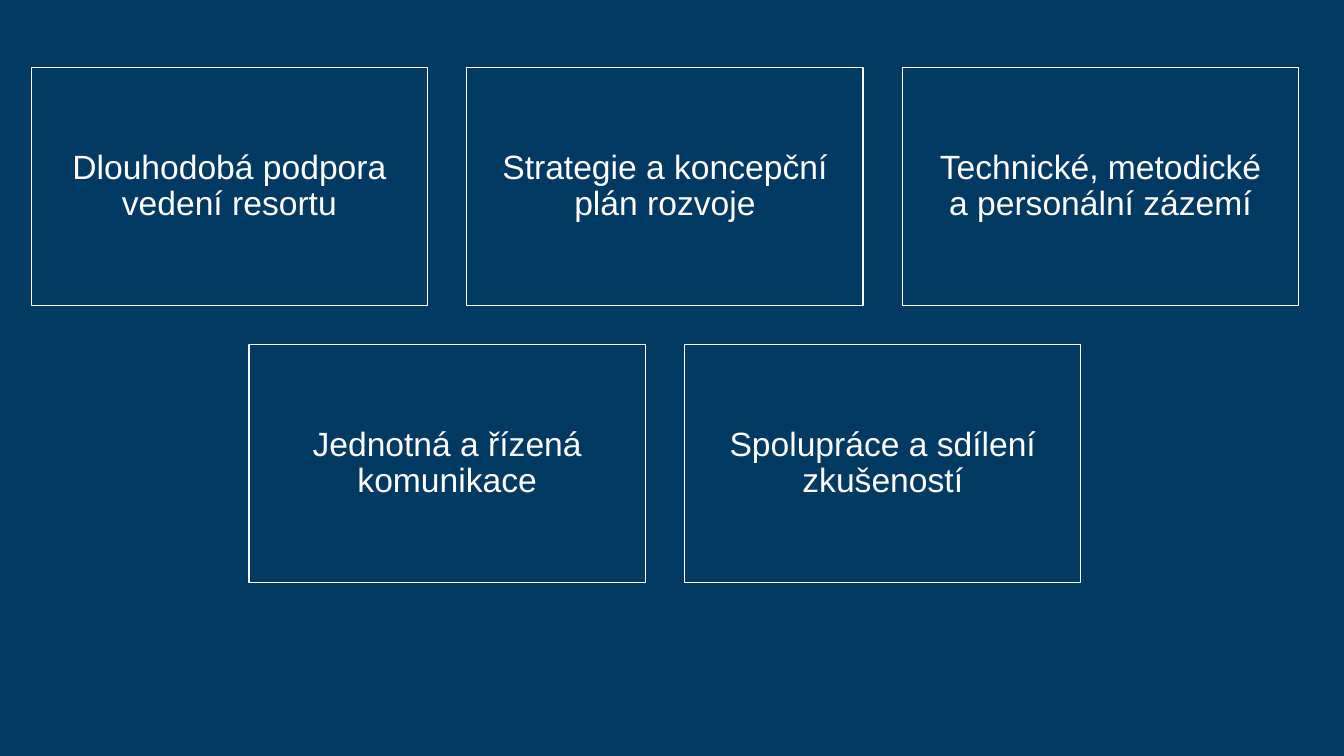
import dataclasses

import pptx
import pptx.dml.color
import pptx.enum.shapes
import pptx.enum.text
import pptx.util
from pptx.util import Inches

COLORS = {"background": "003A62", "card": "003A63", "white": "FFFFFF"}

# Card grid, in inches
LEFT, TOP = 0.31, 0.67
WIDTH, HEIGHT = 3.93, 2.36
PITCH_X, PITCH_Y = 4.32, 2.75
COLUMNS = 3

# Keeps a one-letter conjunction on the line of the next word
NO_BREAK_SPACE = chr(160)

ROWS = [
    ["Dlouhodobá podpora vedení resortu",
     "Strategie a koncepční plán rozvoje",
     f"Technické, metodické a{NO_BREAK_SPACE}personální zázemí"],
    ["Jednotná a řízená komunikace",
     "Spolupráce a sdílení zkušeností"],
]

FRAME_FORMAT = {
    "word_wrap": True,
    "vertical_anchor": pptx.enum.text.MSO_ANCHOR.MIDDLE,
    "margin_left": Inches(0.1),
    "margin_right": Inches(0.1),
    "margin_top": Inches(0.1),
    "margin_bottom": Inches(0.1),
}
PARAGRAPH_FORMAT = {
    "alignment": pptx.enum.text.PP_ALIGN.CENTER,
    "line_spacing": 0.9,
}
FONT_FORMAT = {"name": "Arial", "size": pptx.util.Pt(24)}


@dataclasses.dataclass
class Card:
    text: str
    left: float
    top: float


def rgb(name: str) -> pptx.dml.color.RGBColor:
    return pptx.dml.color.RGBColor.from_string(COLORS[name])


def apply_format(target: object, values: dict) -> None:
    for attribute, value in values.items():
        setattr(target, attribute, value)


def layout_cards() -> list[Card]:
    """Place the cards on the grid, centring any shorter row."""
    cards = []
    for row, texts in enumerate(ROWS):
        indent = (COLUMNS - len(texts)) * PITCH_X / 2
        for column, text in enumerate(texts):
            cards.append(Card(text, LEFT + indent + column * PITCH_X, TOP + row * PITCH_Y))
    return cards


def draw_card(slide: pptx.slide.Slide, card: Card) -> None:
    box = slide.shapes.add_shape(
        pptx.enum.shapes.MSO_SHAPE.RECTANGLE,
        Inches(card.left), Inches(card.top), Inches(WIDTH), Inches(HEIGHT))
    box.shadow.inherit = False
    box.fill.solid()
    box.fill.fore_color.rgb = rgb("card")
    box.line.color.rgb = rgb("white")
    box.line.width = pptx.util.Pt(1)

    # Centred caption
    apply_format(box.text_frame, FRAME_FORMAT)
    caption = box.text_frame.paragraphs[0]
    apply_format(caption, PARAGRAPH_FORMAT)
    run = caption.add_run()
    run.text = card.text
    apply_format(run.font, FONT_FORMAT)
    run.font.color.rgb = rgb("white")


def main() -> None:
    presentation = pptx.Presentation()
    presentation.slide_width = Inches(13.33)
    presentation.slide_height = Inches(7.5)
    slide = presentation.slides.add_slide(presentation.slide_layouts[6])

    # Background
    slide.background.fill.solid()
    slide.background.fill.fore_color.rgb = rgb("background")

    # Success factors
    for card in layout_cards():
        draw_card(slide, card)

    presentation.save("out.pptx")


if __name__ == "__main__":
    main()
